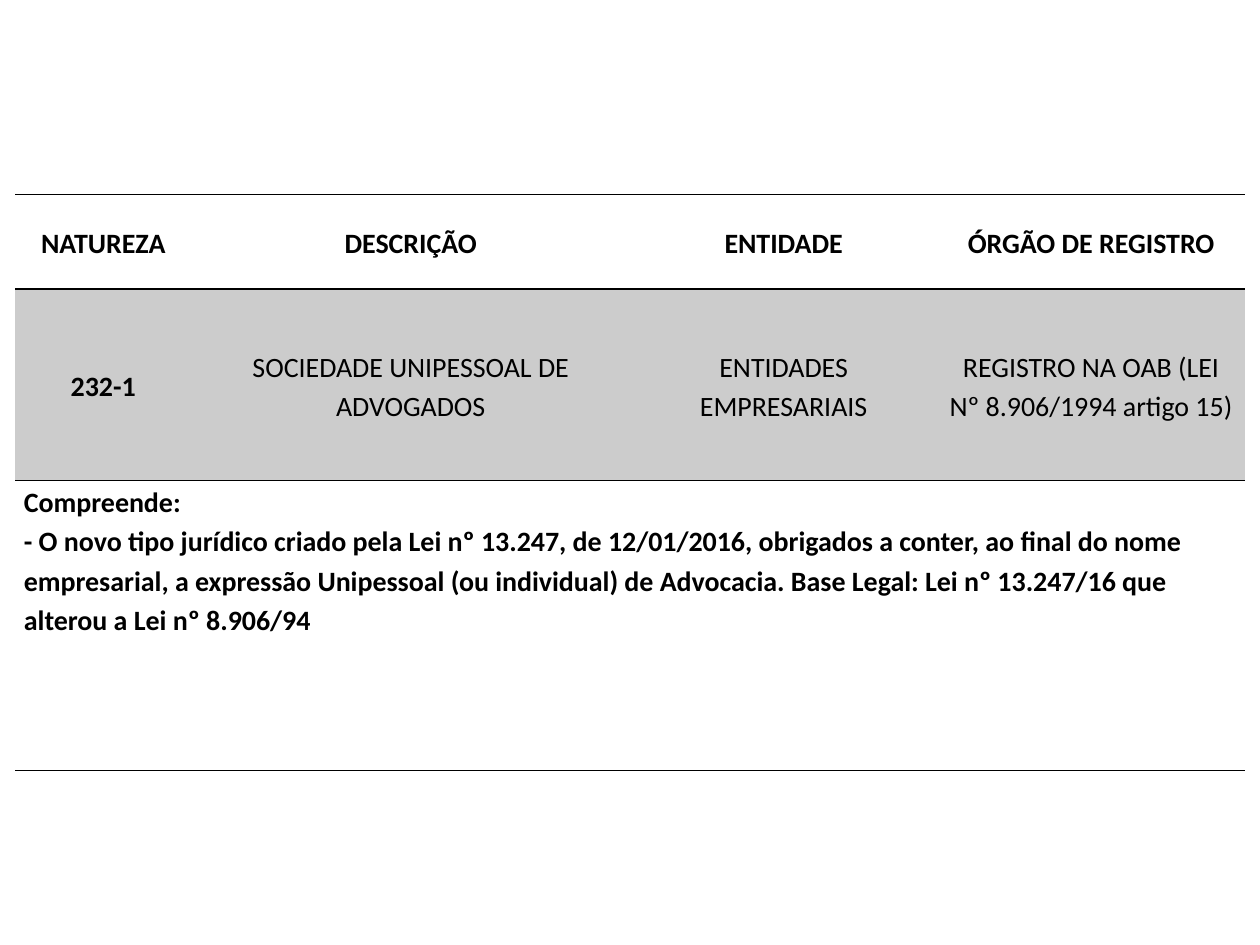
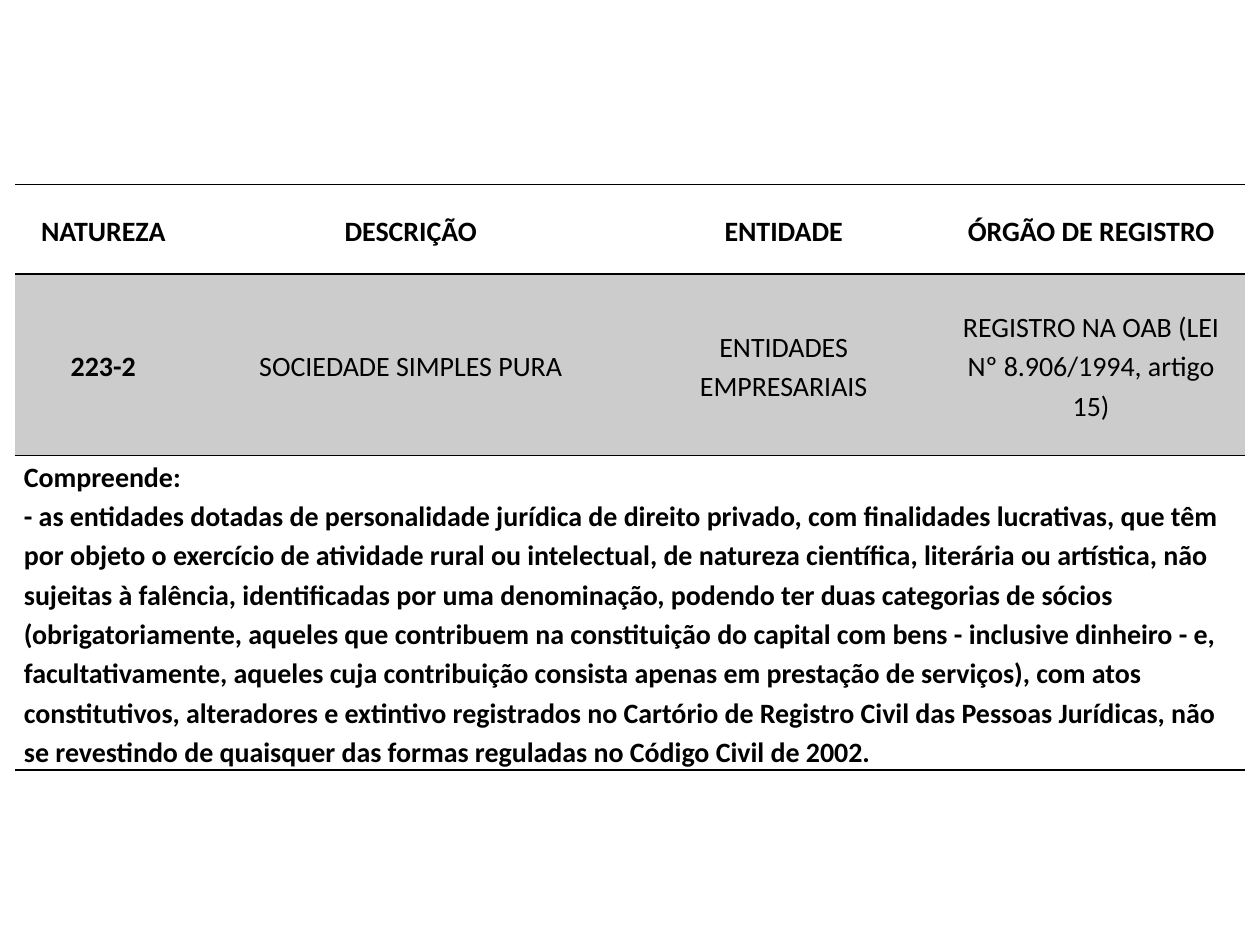
from lxml import etree
from pptx import Presentation
from pptx.dml.color import RGBColor
from pptx.enum.text import MSO_ANCHOR, PP_ALIGN
from pptx.oxml.ns import qn
from pptx.util import Pt

CENTER, LEFT = PP_ALIGN.CENTER, PP_ALIGN.LEFT
MIDDLE, TOP = MSO_ANCHOR.MIDDLE, MSO_ANCHOR.TOP
COLORS = {"ink": "000000", "band": "CCCCCC"}
FONT = "Calibri"
PLAIN_STYLE = "{2D5ABB26-0587-4C30-8999-92F81FD0307C}"
BLANK_LAYOUT = 6

HEADERS = ["NATUREZA", "DESCRIÇÃO", "ENTIDADE", "ÓRGÃO DE REGISTRO"]
COLUMN_WIDTHS = [100.8, 250.56, 175.68, 175.68]
TABLE_LEFT = 8.64

SLIDES = [
    {
        "top": 111.2,
        "row_heights": [54, 109.44, 165.6],
        "values": ["232-1", "SOCIEDADE UNIPESSOAL DE ADVOGADOS", "ENTIDADES EMPRESARIAIS",
                   "REGISTRO NA OAB (LEI Nº 8.906/1994 artigo 15)"],
        "scope": "- O novo tipo jurídico criado pela Lei nº 13.247, de 12/01/2016, obrigados a "
                 "conter, ao final do nome empresarial, a expressão Unipessoal (ou individual) de "
                 "Advocacia. Base Legal: Lei nº 13.247/16 que alterou a Lei nº 8.906/94",
    },
    {
        "top": 105.5,
        "row_heights": [51.12, 103.68, 156.96],
        "values": ["223-2", "SOCIEDADE SIMPLES PURA", "ENTIDADES EMPRESARIAIS",
                   "REGISTRO NA OAB (LEI Nº 8.906/1994, artigo 15)"],
        "scope": "- as entidades dotadas de personalidade jurídica de direito privado, com "
                 "finalidades lucrativas, que têm por objeto o exercício de atividade rural ou "
                 "intelectual, de natureza científica, literária ou artística, não sujeitas à "
                 "falência, identificadas por uma denominação, podendo ter duas categorias de "
                 "sócios (obrigatoriamente, aqueles que contribuem na constituição do capital com "
                 "bens - inclusive dinheiro - e, facultativamente, aqueles cuja contribuição "
                 "consista apenas em prestação de serviços), com atos constitutivos, alteradores "
                 "e extintivo registrados no Cartório de Registro Civil das Pessoas Jurídicas, "
                 "não se revestindo de quaisquer das formas reguladas no Código Civil de 2002.",
    },
]


def add_border(cell, side):
    """Draw a 1 pt line on one side: "T" or "B"; call before filling the cell."""
    properties = cell._tc.get_or_add_tcPr()
    line = etree.SubElement(properties, qn(f"a:ln{side}"), w=str(Pt(1)))
    fill = etree.SubElement(line, qn("a:solidFill"))
    etree.SubElement(fill, qn("a:srgbClr"), val=COLORS["ink"])


def write_cell(cell, lines, bold=True, align=CENTER, anchor=MIDDLE):
    cell.vertical_anchor = anchor
    cell.margin_left = cell.margin_right = Pt(5.04)
    cell.margin_top = cell.margin_bottom = 0
    cell.text = "\n".join(lines)
    for paragraph in cell.text_frame.paragraphs:
        paragraph.alignment = align
        paragraph.line_spacing = 1.15
        paragraph.font.name = FONT
        paragraph.font.size = Pt(16)
        paragraph.font.bold = bold
        paragraph.font.color.rgb = RGBColor.from_string(COLORS["ink"])


def fill_cell(cell, color=None):
    if color:
        cell.fill.solid()
        cell.fill.fore_color.rgb = RGBColor.from_string(COLORS[color])
    else:
        cell.fill.background()


def add_nature_table(slide, left, top, row_heights, values, scope):
    frame = slide.shapes.add_table(
        len(row_heights), len(HEADERS), Pt(left), Pt(top),
        Pt(sum(COLUMN_WIDTHS)), Pt(sum(row_heights)))
    table = frame.table
    table._tbl.tblPr.find(qn("a:tableStyleId")).text = PLAIN_STYLE
    table.horz_banding = False
    for column, width in zip(table.columns, COLUMN_WIDTHS):
        column.width = Pt(width)
    for row, height in zip(table.rows, row_heights):
        row.height = Pt(height)

    for index, (header, value) in enumerate(zip(HEADERS, values)):
        header_cell, value_cell, scope_cell = (table.cell(row, index) for row in range(3))
        add_border(header_cell, "T")
        add_border(header_cell, "B")
        add_border(value_cell, "T")
        add_border(scope_cell, "B")
        fill_cell(header_cell)
        fill_cell(value_cell, "band")
        fill_cell(scope_cell)
        write_cell(header_cell, [header])
        write_cell(value_cell, [value], bold=index == 0)

    scope_cell = table.cell(2, 0)
    scope_cell.merge(table.cell(2, len(HEADERS) - 1))
    write_cell(scope_cell, ["Compreende:", scope], align=LEFT, anchor=TOP)


def main():
    presentation = Presentation()
    presentation.slide_width, presentation.slide_height = Pt(720), Pt(540)
    for content in SLIDES:
        slide = presentation.slides.add_slide(presentation.slide_layouts[BLANK_LAYOUT])
        add_nature_table(slide, TABLE_LEFT, **content)
    presentation.save("out.pptx")


if __name__ == "__main__":
    main()
